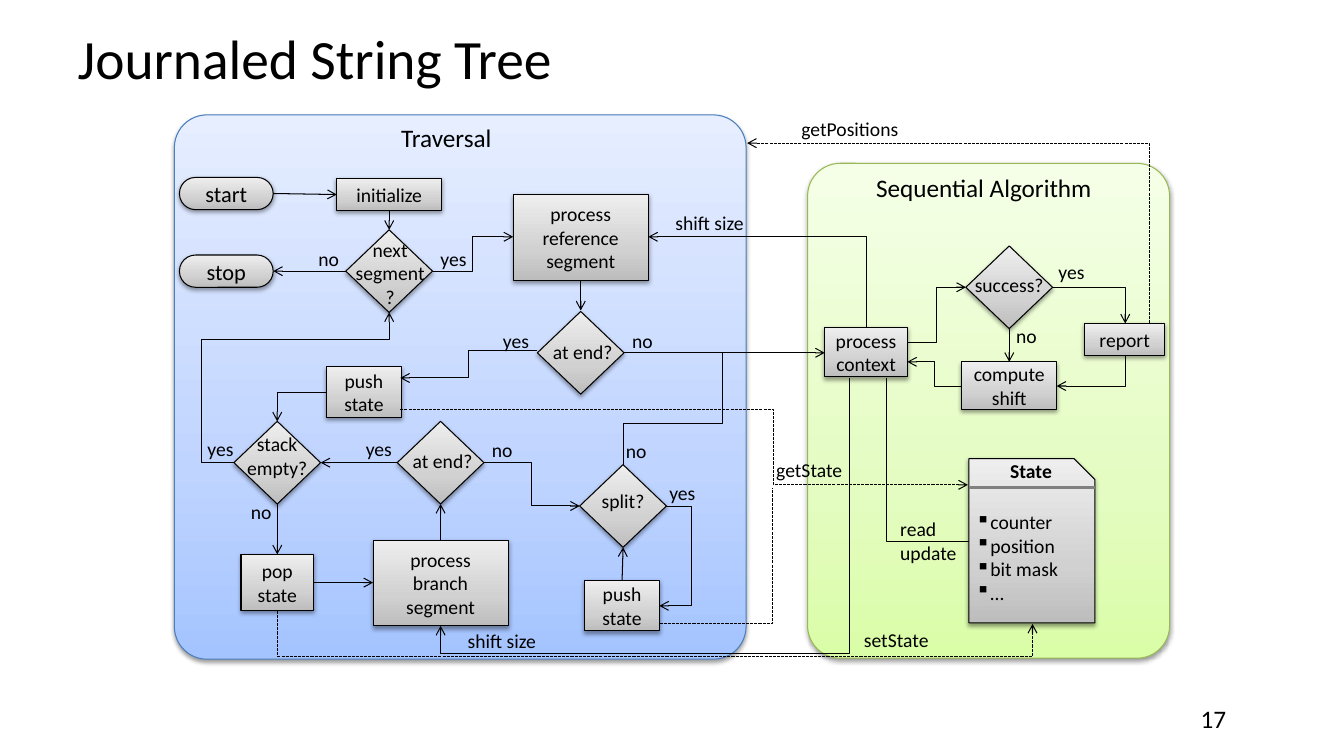
"""Build the Journaled String Tree flowchart slide."""
from copy import deepcopy
from lxml import etree
from pptx import Presentation
from pptx.dml.color import RGBColor
from pptx.enum.dml import MSO_LINE
from pptx.enum.shapes import MSO_CONNECTOR, MSO_SHAPE
from pptx.enum.text import MSO_ANCHOR, MSO_AUTO_SIZE, PP_ALIGN
from pptx.oxml.ns import qn
from pptx.util import Inches, Pt

LEFT, CENTER = PP_ALIGN.LEFT, PP_ALIGN.CENTER
MIDDLE, TOP = MSO_ANCHOR.MIDDLE, MSO_ANCHOR.TOP
RECTANGLE, ROUNDED = MSO_SHAPE.RECTANGLE, MSO_SHAPE.ROUNDED_RECTANGLE
DIAMOND, SNIPPED = MSO_SHAPE.DIAMOND, MSO_SHAPE.SNIP_1_RECTANGLE
STRAIGHT, ELBOW = MSO_CONNECTOR.STRAIGHT, MSO_CONNECTOR.ELBOW
DASH = MSO_LINE.SQUARE_DOT

COLORS = {"ink": "000000", "divider": "808080", "green edge": "98B955", "blue edge": "4B7EBC"}
GRADIENTS = {
    "gray": ("BDBDBD", "D1D1D1", "EEEEEE"),
    "green": ("DAFDA7", "E4FCC2", "F5FFE7"),
    "blue": ("A4C4FF", "BFD4FF", "E6EEFF"),
}
STOPS = (0, 0.35, 1)
DIAMOND_SIZE = (0.86, 0.82)

presentation = Presentation()
presentation.slide_width, presentation.slide_height = Inches(13.33), Inches(7.5)
slide = presentation.slides.add_slide(presentation.slide_layouts[5])
shapes = slide.shapes


def write_text(shape, text, size=14, align=LEFT, anchor=TOP, inset=(0.1, 0.05), bold=False):
    frame = shape.text_frame
    margin_x, margin_y = map(Inches, inset)
    frame_format = {
        "auto_size": MSO_AUTO_SIZE.NONE, "word_wrap": True, "vertical_anchor": anchor,
        "margin_left": margin_x, "margin_right": margin_x,
        "margin_top": margin_y, "margin_bottom": margin_y,
    }
    for name, value in frame_format.items():
        setattr(frame, name, value)
    frame.text = text
    for paragraph in frame.paragraphs:
        paragraph.alignment = align
        font = paragraph.runs[0].font
        for name, value in {"name": "Calibri", "size": Pt(size), "bold": bold}.items():
            setattr(font, name, value)
        font.color.rgb = RGBColor.from_string(COLORS["ink"])
    return shape


def add_block(kind, box, gradient="gray", edge="ink", corner=None):
    shape = shapes.add_shape(kind, *map(Inches, box))
    if corner is not None:
        shape.adjustments[0] = corner
    shape.fill.gradient()
    stop_list = shape.element.spPr.find(".//" + qn("a:gsLst"))
    stop_list.insert(1, deepcopy(stop_list[0]))
    for stop, position, color in zip(shape.fill.gradient_stops, STOPS, GRADIENTS[gradient]):
        stop.position = position
        stop.color.rgb = RGBColor.from_string(color)
    shape.fill.gradient_angle = 90
    shape.line.color.rgb = RGBColor.from_string(COLORS[edge])
    shape.line.width = Pt(0.75)
    shape.shadow.inherit = False
    effects = shape.element.spPr.find(qn("a:effectLst"))
    shadow = etree.SubElement(effects, qn("a:outerShdw"), blurRad="40000", dist="20000",
                              dir="5400000", rotWithShape="0")
    shadow_color = etree.SubElement(shadow, qn("a:srgbClr"), val=COLORS["ink"])
    etree.SubElement(shadow_color, qn("a:alpha"), val="38000")
    return shape


title = shapes.title
title.left, title.top, title.width, title.height = map(Inches, (0.67, 0.17, 12, 0.8))
write_text(title, "Journaled String Tree", 39.6, anchor=MIDDLE)

add_block(ROUNDED, (8.01, 1.62, 3.59, 4.91), "green", "green edge", 0.09)
add_block(ROUNDED, (1.73, 1.14, 5.67, 5.4), "blue", "blue edge", 0.06)

steps = [
    ("process\ncontext", 8.18, 3.25, 0.82, 0.49),
    ("report", 10.76, 3.21, 0.79, 0.32),
    ("compute shift", 9.54, 3.59, 0.94, 0.47),
    ("initialize", 3.34, 1.77, 1.04, 0.32),
    ("process\nreference segment", 5.09, 1.93, 1.34, 0.85),
    ("pop state", 2.39, 5.5, 0.72, 0.56),
    ("process\nbranch\nsegment", 3.7, 5.36, 1.34, 0.85),
    ("push state", 5.8, 5.76, 0.74, 0.5),
    ("push state", 3.24, 3.64, 0.74, 0.5),
]
for text, *box in steps:
    write_text(add_block(RECTANGLE, box), text, 14, CENTER, MIDDLE, (0.05, 0))

for text, top in [("start", 1.76), ("stop", 2.53)]:
    terminal = add_block(ROUNDED, (1.78, top, 0.93, 0.32), corner=0.5)
    write_text(terminal, text, 16, CENTER, MIDDLE, (0.05, 0))

decisions = [
    ("success?", 9.58, 2.44, 9.56, 2.66),
    ("next\nsegment?", 3.43, 2.28, 3.42, 2.31),
    ("stack\nempty?", 2.32, 4.18, 2.3, 4.24),
    ("at end?", 5.33, 3.09, 5.33, 3.32),
    ("at end?", 3.94, 4.18, 3.94, 4.4),
    ("split?", 5.75, 4.61, 5.73, 4.8),
]
for text, left, top, text_left, text_top in decisions:
    diamond = add_block(DIAMOND, (left, top, *DIAMOND_SIZE))
    caption = shapes.add_textbox(*map(Inches, (text_left, text_top, 0.9, 0.34)))
    shapes.add_group_shape([diamond, write_text(caption, text, align=CENTER)])

state_card = add_block(SNIPPED, (9.61, 4.55, 1.25, 1.63))
state_name = shapes.add_textbox(*map(Inches, (9.92, 4.5, 0.64, 0.34)))
write_text(state_name, "State", bold=True)
state_fields = shapes.add_textbox(*map(Inches, (9.58, 5.01, 1.26, 1.04)))
write_text(state_fields, "counter\nposition\nbit mask\n…")
for paragraph in state_fields.text_frame.paragraphs:
    properties = paragraph._p.get_or_add_pPr()
    properties.set("marL", str(Inches(0.01)))
    properties.set("indent", str(Inches(-0.31)))
    etree.SubElement(properties, qn("a:buChar"), char="▪")
shapes.add_group_shape([state_card, state_name, state_fields])

flow, plain = {"arrow": True}, {}
dashed_flow, dashed = {"arrow": True, "dash": DASH}, {"dash": DASH}
divider = {"color": "divider", "width": 2}
routes = [
    (divider, (9.61, 4.84), (10.86, 4.84)),
    (flow, (3.43, 2.69), (2.71, 2.69)),
    (flow, (10.44, 2.85), (11.16, 2.85), (11.16, 3.21)),
    (flow, (11.16, 3.53), (11.16, 3.83), (10.48, 3.83)),
    (flow, (4.37, 5.36), (4.37, 5)),
    (flow, (8.59, 3.25), (8.59, 2.35), (6.43, 2.35)),
    (flow, (8.43, 3.75), (8.43, 6.48), (4.37, 6.48), (4.37, 6.21)),
    (flow, (10.01, 3.26), (10.01, 3.59)),
    (flow, (9, 3.4), (9.29, 3.4), (9.29, 2.85), (9.58, 2.85)),
    (flow, (9.54, 3.83), (9.27, 3.83), (9.27, 3.59), (9, 3.59)),
    (plain, (8.79, 3.75), (8.79, 5.37), (9.61, 5.37)),
    (flow, (2.75, 5), (2.75, 5.5)),
    (flow, (3.11, 5.78), (3.7, 5.78)),
    (flow, (2.32, 4.59), (2, 4.59), (2, 3.37), (3.86, 3.37), (3.86, 3.1)),
    (flow, (3.86, 2.09), (3.86, 2.28)),
    (flow, (2.71, 1.92), (3.34, 1.93)),
    (flow, (6.19, 3.5), (8.18, 3.5)),
    (flow, (5.76, 2.78), (5.76, 3.08)),
    (flow, (4.29, 2.69), (4.69, 2.69), (4.69, 2.35), (5.09, 2.35)),
    (flow, (5.33, 3.48), (4.65, 3.48), (4.65, 3.75), (3.97, 3.75)),
    (flow, (3.24, 3.89), (2.75, 3.89), (2.75, 4.18)),
    (flow, (3.94, 4.59), (3.18, 4.59)),
    (flow, (6.61, 5.02), (6.86, 5.02), (6.86, 6.01), (6.54, 6.01)),
    (flow, (6.17, 5.76), (6.18, 5.43)),
    (flow, (4.8, 4.59), (5.27, 4.59), (5.27, 5.02), (5.75, 5.02)),
    (plain, (6.18, 4.61), (6.18, 4.2), (7.17, 4.2), (7.17, 3.5)),
    (dashed_flow, (3.97, 4.06), (7.67, 4.06), (7.67, 4.81), (9.6, 4.81)),
    (dashed, (6.54, 6.19), (7.66, 6.19), (7.66, 4.84)),
    (dashed_flow, (2.75, 6.06), (2.75, 6.51), (10.24, 6.51), (10.24, 6.19)),
    (dashed_flow, (11.4, 3.21), (11.4, 1.42), (7.41, 1.42)),
]
for style, start, *bends, end in routes:
    across, down = end[0] - start[0], end[1] - start[1]
    middle_x, middle_y = (start[0] + end[0]) / 2, (start[1] + end[1]) / 2
    upright = bool(bends) and bends[0][0] == start[0]
    turn = 1 if across * down < 0 else -1
    run, rise = (turn * down, -turn * across) if upright else (across, down)
    corners = (middle_x - run / 2, middle_y - rise / 2, middle_x + run / 2, middle_y + rise / 2)
    connector = shapes.add_connector(ELBOW if bends else STRAIGHT, *map(Inches, corners))
    properties = connector.element.spPr
    if upright:
        properties.find(qn("a:xfrm")).set("rot", str(turn * 5400000 % 21600000))
    if bends:
        geometry = properties.find(qn("a:prstGeom"))
        geometry.set("prst", f"bentConnector{len(bends) + 1}")
        first, second = (1, 0) if upright else (0, 1)
        span = (across, down)
        for number, axis in list(enumerate((first, second), 1))[:len(bends) - 1]:
            share = (bends[number - 1 if number == 1 else number][axis] - start[axis]) / span[axis]
            etree.SubElement(geometry.find(qn("a:avLst")), qn("a:gd"), name=f"adj{number}",
                             fmla=f"val {round(share * 100000)}")
    connector.line.color.rgb = RGBColor.from_string(COLORS[style.get("color", "ink")])
    connector.line.width = Pt(style.get("width", 0.75))
    if "dash" in style:
        connector.line.dash_style = style["dash"]
    if "arrow" in style:
        etree.SubElement(properties.get_or_add_ln(), qn("a:tailEnd"), type="arrow")
    etree.SubElement(properties, qn("a:effectLst"))

for text, width, *places in [
    ("no", 0.42, (3.06, 2.4), (6.11, 4.31), (6.17, 3.21), (2.39, 4.91), (4.78, 4.3), (9.98, 3.16)),
    ("yes", 0.53, (4.27, 2.4), (6.54, 4.72), (4.89, 3.21), (1.96, 4.29), (3.53, 4.29), (10.4, 2.53)),
    ("shift size", 1.13, (6.6, 2.04), (4.54, 6.19)),
    ("read\nupdate", 0.93, (8.83, 5.08)),
    ("getState", 1.13, (7.6, 4.49)),
    ("setState", 1.13, (8.47, 6.18)),
    ("getPositions", 1.3, (7.85, 1.11)),
]:
    for left, top in places:
        write_text(shapes.add_textbox(*map(Inches, (left, top, width, 0.34))), text)

for text, *box in [
    ("Traversal", 3.88, 1.16, 1.42, 0.4),
    ("Sequential Algorithm", 8.59, 1.66, 2.38, 0.4),
    ("17", 11.81, 6.93, 1.27, 0.4),
]:
    write_text(shapes.add_textbox(*map(Inches, box)), text, 18)

presentation.save("out.pptx")
